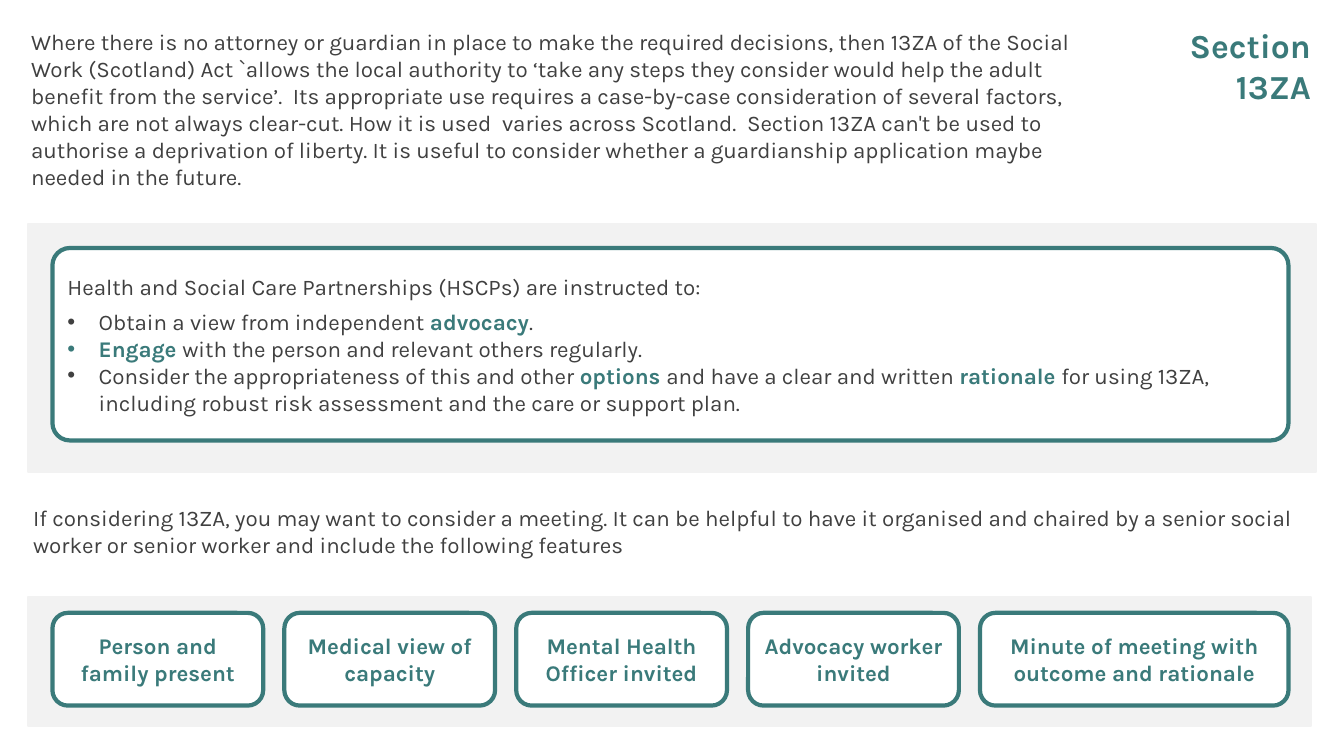
from pptx import Presentation
from pptx.dml.color import RGBColor
from pptx.enum.shapes import MSO_SHAPE
from pptx.enum.text import MSO_ANCHOR, PP_ALIGN
from pptx.oxml.xmlchemy import OxmlElement
from pptx.util import Inches, Pt

RECT, ROUND = MSO_SHAPE.RECTANGLE, MSO_SHAPE.ROUNDED_RECTANGLE
TOP, MIDDLE = MSO_ANCHOR.TOP, MSO_ANCHOR.MIDDLE
LEFT, CENTER, RIGHT = PP_ALIGN.LEFT, PP_ALIGN.CENTER, PP_ALIGN.RIGHT
TEAL = RGBColor(0x3A, 0x7A, 0x7A)
DARK = RGBColor(0x40, 0x40, 0x40)
PALE = RGBColor(0xF2, 0xF2, 0xF2)
WHITE = RGBColor(0xFF, 0xFF, 0xFF)

# Content: text between asterisks is bold teal
TITLE = "*Section 13ZA*"
INTRO = (
    "Where there is no attorney or guardian in place to make the required decisions, "
    "then 13ZA of the Social Work (Scotland) Act `allows the local authority to "
    "‘take any steps they consider would help the adult benefit from the service’.  "
    "Its appropriate use requires a case-by-case consideration of several factors, "
    "which are not always clear-cut. How it is used  varies across Scotland.  "
    "Section 13ZA can't be used to authorise a deprivation of liberty. It is useful to "
    "consider whether a guardianship application maybe needed in the future. "
)
DUTIES_LEAD = "Health and Social Care Partnerships (HSCPs) are instructed to:"
DUTIES = [
    "Obtain a view from independent *advocacy*.",
    "*Engage *with the person and relevant others regularly.",
    "Consider the appropriateness of this and other *options *and have a clear and "
    "written *rationale *for using 13ZA, including robust risk assessment and the "
    "care or support plan.",
]
MEETING = (
    "If considering 13ZA, you may want to consider a meeting. It can be helpful to have "
    "it organised and chaired by a senior social worker or senior worker and include "
    "the following features"
)
FEATURES = [
    "*Person and family present*",
    "*Medical view of capacity*",
    "*Mental Health Officer invited*",
    "*Advocacy worker invited*",
    "*Minute of meeting with outcome and rationale*",
]

# Layout in inches
SLIDE_W, SLIDE_H = 13.33, 7.5
PANELS = [(0.28, 2.22, 12.77, 2.46), (0.28, 5.92, 12.72, 1.28)]
CARD_X, CARD_W = 0.52, 12.26
FEATURE_Y, FEATURE_W, FEATURE_H, PITCH = 6.08, 2.09, 0.92, 2.3
INDENT = 0.31

prs = Presentation()
prs.slide_width, prs.slide_height = Inches(SLIDE_W), Inches(SLIDE_H)
s = prs.slides.add_slide(prs.slide_layouts[6])


def add_box(kind, at, fill, line, width):
    sp = s.shapes.add_shape(kind, *map(Inches, at))
    sp.shadow.inherit = False
    sp.fill.solid()
    sp.fill.fore_color.rgb = fill
    sp.line.color.rgb = line
    sp.line.width = Pt(width)
    return sp


def add_card(at):
    return add_box(ROUND, at, WHITE, TEAL, 3)


def add_runs(p, text, size=16, align=LEFT):
    p.alignment = align
    for i, part in enumerate(text.split("*")):
        if not part:
            continue
        r = p.add_run()
        r.text = part
        strong = i % 2 == 1
        for name, value in {"name": "Karla", "size": Pt(size), "bold": strong}.items():
            setattr(r.font, name, value)
        r.font.color.rgb = TEAL if strong else DARK


def write(sp, text, anchor=MIDDLE, **style):
    tf = sp.text_frame
    tf.word_wrap = True
    tf.vertical_anchor = anchor
    add_runs(tf.paragraphs[0], text, **style)
    return tf


def add_text(at, text, **style):
    write(s.shapes.add_textbox(*map(Inches, at)), text, **style)


def add_bullet(p):
    pPr = p._p.get_or_add_pPr()
    pPr.set("marL", str(Inches(INDENT)))
    pPr.set("indent", str(-Inches(INDENT)))
    for tag, key, value in [("a:buFont", "typeface", "Arial"), ("a:buChar", "char", "•")]:
        bu = OxmlElement(tag)
        bu.set(key, value)
        pPr.append(bu)


# Grey panels and introduction
for panel in PANELS:
    add_box(RECT, panel, PALE, PALE, 1.5)
add_text((0.21, 0.27, 10.68, 1.62), INTRO)

# Duties card
card = add_card((CARD_X, 2.46, CARD_W, 1.91))
card.adjustments[0] = 0.091
tf = write(card, DUTIES_LEAD)
for i, duty in enumerate(DUTIES):
    p = tf.add_paragraph()
    add_runs(p, duty)
    if i == 0:
        p.space_before = Pt(6)
    add_bullet(p)

# Meeting features: equal pitch, the last card fills the row
add_text((0.23, 5.1, 12.77, 0.34), MEETING)
for i, feature in enumerate(FEATURES):
    offset = i * PITCH
    width = CARD_W - offset if i == len(FEATURES) - 1 else FEATURE_W
    write(add_card((CARD_X + offset, FEATURE_Y, width, FEATURE_H)), feature, align=CENTER)

# Title
add_text((10.89, 0.2, 2.21, 0.5), TITLE, anchor=TOP, size=24, align=RIGHT)

prs.save("out.pptx")
